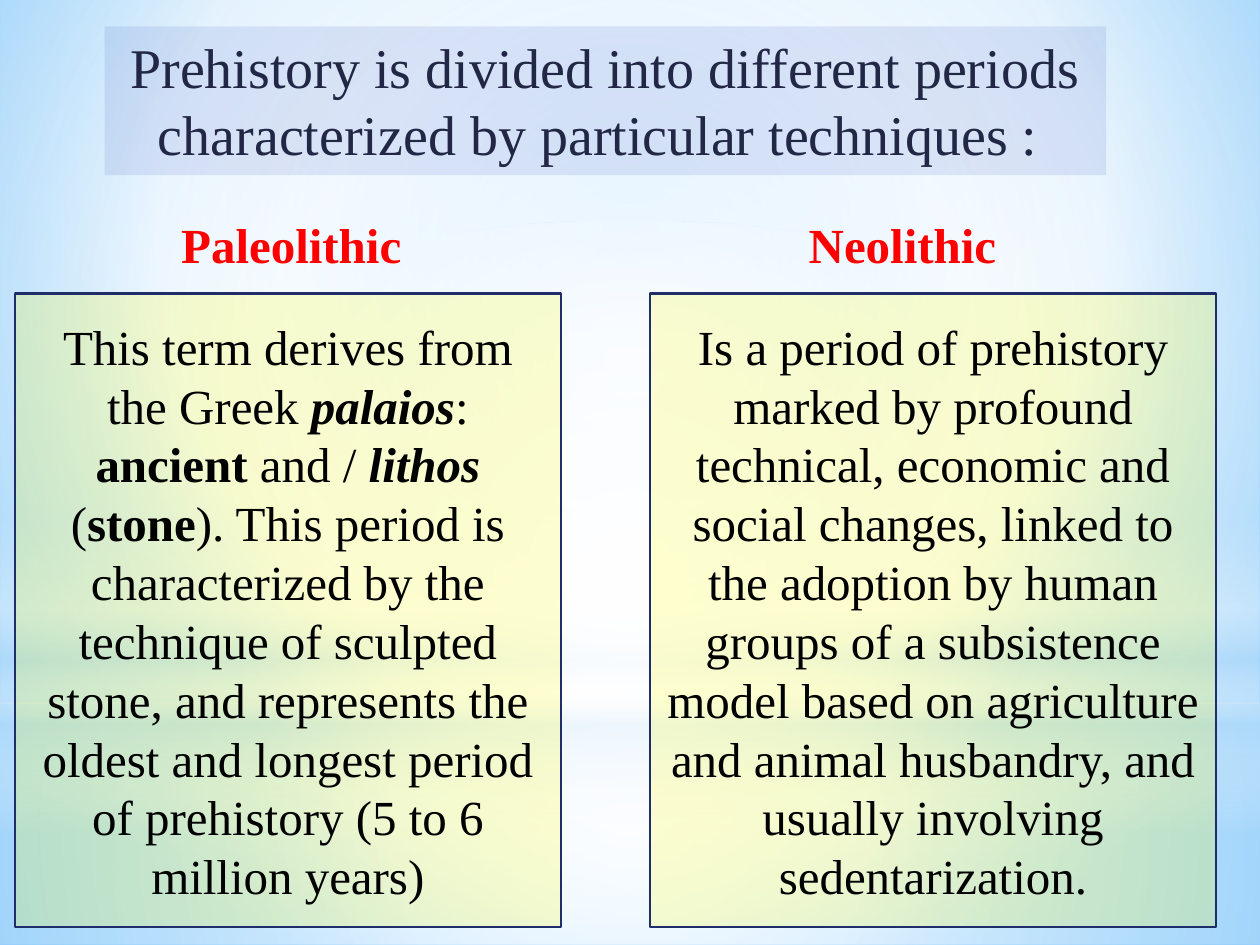
"""Build a slide comparing the Paleolithic and Neolithic periods."""
from lxml.etree import SubElement
from pptx import Presentation
from pptx.dml.color import RGBColor
from pptx.enum.shapes import MSO_SHAPE
from pptx.enum.text import MSO_ANCHOR, MSO_AUTO_SIZE, PP_ALIGN
from pptx.oxml.ns import qn
from pptx.util import Inches, Pt

FONT = "Times New Roman"
NAVY = RGBColor(0x21, 0x27, 0x45)
BLUE = RGBColor(0x4E, 0x67, 0xC8)
BORDER = RGBColor(0x1F, 0x2E, 0x69)
YELLOW = RGBColor(0xFF, 0xFF, 0x00)
RED = RGBColor(0xFF, 0x00, 0x00)
BLACK = RGBColor(0x00, 0x00, 0x00)
WHITE = RGBColor(0xFF, 0xFF, 0xFF)
SKY = RGBColor(0xB4, 0xDC, 0xFA)
SKY_EDGE = RGBColor(0x5B, 0xB9, 0xFF)
SKY_LIGHT = RGBColor(0x9E, 0xD5, 0xFF)

CENTER = (50, 50, 50, 50)
BACKGROUND = [(0, SKY_LIGHT, 100), (60, WHITE, 100), (100, SKY_EDGE, 100)]
GLOWS = [
    (MSO_SHAPE.RECTANGLE, (0, 5.58, 10, 1.92),
     [(0, WHITE, 91), (37, WHITE, 76), (100, SKY, 79)], CENTER),
    (MSO_SHAPE.RECTANGLE, (0, 0, 10, 5.58),
     [(0, WHITE, 89), (48, WHITE, 62), (100, SKY, 79)], CENTER),
    (MSO_SHAPE.RECTANGLE, (0, 4.12, 10, 2.5),
     [(0, WHITE, 0), (29, WHITE, 30), (45, SKY, 40),
      (55, WHITE, 26), (65, SKY, 60), (100, WHITE, 0)], None),
    (MSO_SHAPE.OVAL, (0, 1.75, 10, 5.58),
     [(0, WHITE, 100), (56, WHITE, 0)], CENTER),
]
TITLE = ("Prehistory is divided into different periods "
         "characterized by particular techniques : ")
PERIODS = [
    ("Paleolithic", (1.34, 2.07), (0.12, 4.33), [
        ("This term derives from the Greek ", ""), ("palaios", "bi"),
        (": ", ""), ("ancient", "b"), (" and / ", ""), ("lithos", "bi"),
        (" (", ""), ("stone", "b"),
        ("). This period is characterized by the technique of sculpted "
         "stone, and represents the oldest and longest period of "
         "prehistory (5 to 6 million years)", ""),
    ]),
    ("Neolithic", (6.32, 1.8), (5.16, 4.49), [
        ("Is a period of prehistory marked by profound technical, economic "
         "and social changes, linked to the adoption by human groups of a "
         "subsistence model based on agriculture and animal husbandry, and "
         "usually involving sedentarization.", ""),
    ]),
]


def set_gradient(fill, root, stops, focus):
    fill.gradient()
    grad = root.find(".//" + qn("a:gradFill"))
    for child in list(grad):
        grad.remove(child)
    gs_list = SubElement(grad, qn("a:gsLst"))
    for pos, color, opacity in stops:
        gs = SubElement(gs_list, qn("a:gs"), pos=str(pos * 1000))
        clr = SubElement(gs, qn("a:srgbClr"), val=str(color))
        SubElement(clr, qn("a:alpha"), val=str(opacity * 1000))
    if focus:
        shade = SubElement(grad, qn("a:path"), path="circle")
        sides = {k: str(v * 1000) for k, v in zip("ltrb", focus)}
        SubElement(shade, qn("a:fillToRect"), sides)
    else:
        SubElement(grad, qn("a:lin"), ang=str(90 * 60000), scaled="0")


def add_panel(slide, kind, box):
    sp = slide.shapes.add_shape(kind, *map(Inches, box))
    sp.shadow.inherit = False
    sp.line.fill.background()
    return sp


def set_tint(sp, color, opacity):
    sp.fill.solid()
    sp.fill.fore_color.rgb = color
    clr = sp._element.spPr.find(".//" + qn("a:srgbClr"))
    SubElement(clr, qn("a:alpha"), val=str(opacity * 1000))


def write(sp, runs, size, color, align, bold=None):
    p = sp.text_frame.paragraphs[0]
    p.alignment = align
    p.font.name, p.font.size, p.font.bold = FONT, Pt(size), bold
    p.font.color.rgb = color
    for text, style in runs:
        r = p.add_run()
        r.text = text
        if style:
            r.font.bold = "b" in style
            r.font.italic = "i" in style


def main():
    prs = Presentation()
    prs.slide_width, prs.slide_height = Inches(10), Inches(7.5)
    s = prs.slides.add_slide(prs.slide_layouts[6])
    set_gradient(s.background.fill, s._element, BACKGROUND, (20, 10, 20, 60))
    for kind, box, stops, focus in GLOWS:
        sp = add_panel(s, kind, box)
        set_gradient(sp.fill, sp._element, stops, focus)

    sp = add_panel(s, MSO_SHAPE.RECTANGLE, (0.83, 0.21, 7.95, 1.18))
    set_tint(sp, BLUE, 14)
    sp.text_frame.word_wrap = True
    sp.text_frame.vertical_anchor = MSO_ANCHOR.TOP
    sp.text_frame.auto_size = MSO_AUTO_SIZE.SHAPE_TO_FIT_TEXT
    write(sp, [(TITLE, "")], 32, NAVY, PP_ALIGN.CENTER)

    for name, (name_x, name_w), (x, w), runs in PERIODS:
        tb = s.shapes.add_textbox(*map(Inches, (name_x, 1.65, name_w, 0.57)))
        tb.text_frame.word_wrap = False
        tb.text_frame.auto_size = MSO_AUTO_SIZE.SHAPE_TO_FIT_TEXT
        write(tb, [(name, "")], 28, RED, PP_ALIGN.LEFT, True)

        sp = add_panel(s, MSO_SHAPE.RECTANGLE, (x, 2.33, w, 5.03))
        set_tint(sp, YELLOW, 19)
        sp.line.color.rgb = BORDER
        sp.line.width = Pt(1.25)
        sp.text_frame.word_wrap = True
        sp.text_frame.vertical_anchor = MSO_ANCHOR.MIDDLE
        write(sp, runs, 28, BLACK, PP_ALIGN.CENTER)

    prs.save("out.pptx")


if __name__ == "__main__":
    main()
